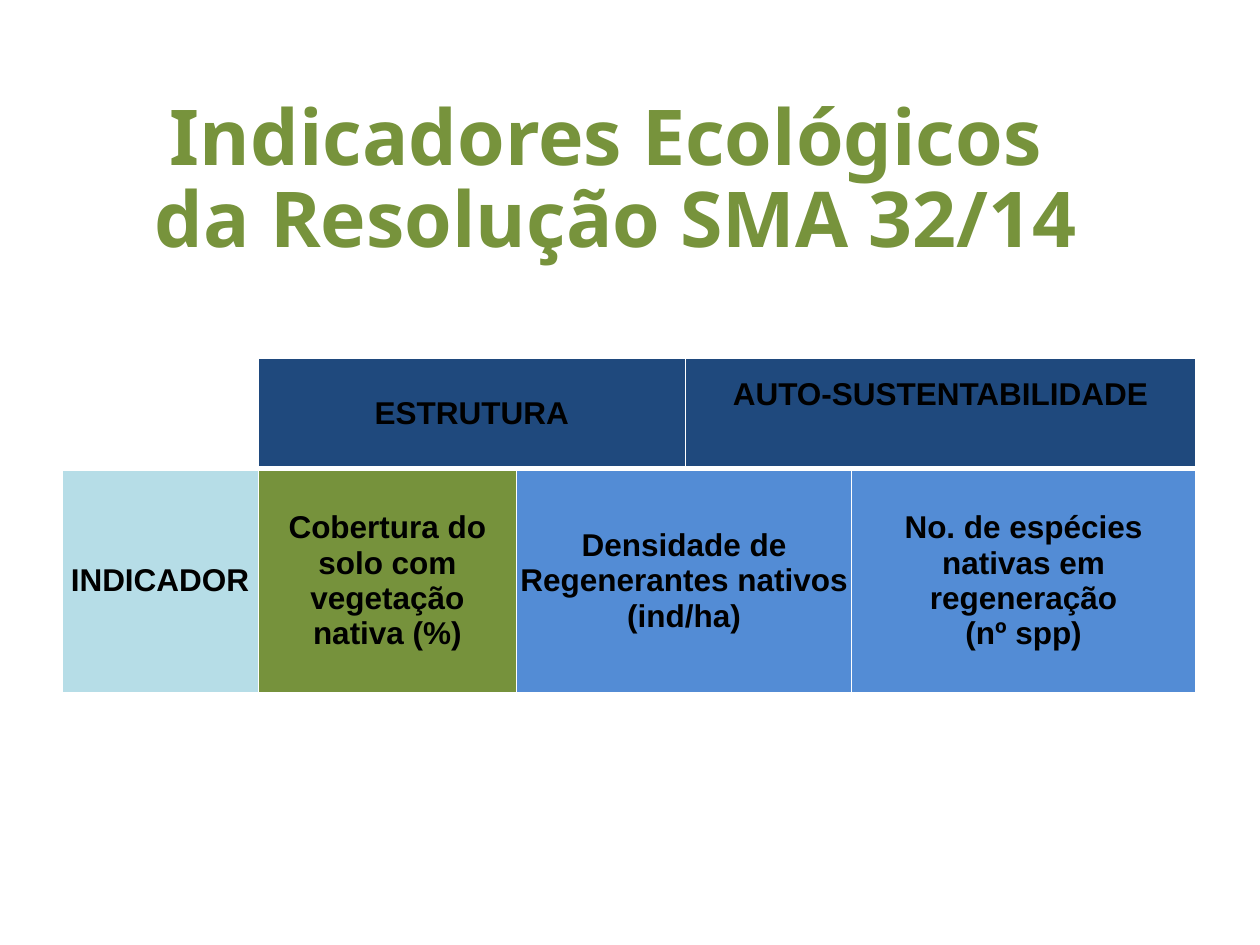
from lxml import etree
from pptx import Presentation
from pptx.dml.color import RGBColor
from pptx.enum.text import MSO_ANCHOR, PP_ALIGN
from pptx.oxml.ns import qn
from pptx.util import Inches, Pt

CENTER, MIDDLE = PP_ALIGN.CENTER, MSO_ANCHOR.MIDDLE

# Content
COLORS = {"title": "77933C", "text": "000000", "white": "FFFFFF", "group": "1F497D",
          "label": "B6DDE7", "cover": "76923C", "regeneration": "538CD5"}
TITLE = "Indicadores Ecológicos \vda Resolução SMA 32/14"
# Each cell: text, columns spanned, fill, bottom margin in inches
ROWS = [
    [("", 1, "white", 0),
     ("ESTRUTURA", 2, "group", 0),
     ("AUTO-SUSTENTABILIDADE", 2, "group", 0.29)],
    [("INDICADOR", 1, "label", 0),
     ("Cobertura do solo com vegetação nativa (%)", 1, "cover", 0),
     ("Densidade de Regenerantes nativos (ind/ha)", 2, "regeneration", 0),
     ("No. de espécies nativas em regeneração\n(nº spp)", 1, "regeneration", 0)],
]
COLUMN_WIDTHS = [1.56, 2.05, 1.34, 1.32, 2.73]
ROW_HEIGHTS = [0.88, 1.78]
THIN, THICK = 1, 3


def write(frame, text, size, font, color, spacing=1.0):
    """Fill a text frame with bold centred paragraphs, one per line of text."""
    frame.word_wrap = True
    frame.text = text
    for paragraph in frame.paragraphs:
        paragraph.alignment = CENTER
        paragraph.line_spacing = spacing
        for target in (paragraph, *paragraph.runs):
            target.font.size = Pt(size)
            target.font.name = font
            target.font.bold = True
            target.font.color.rgb = RGBColor.from_string(COLORS[color])


def set_borders(cell, top, bottom):
    properties = cell._tc.get_or_add_tcPr()
    sides = {"a:lnL": THIN, "a:lnR": THIN, "a:lnT": top, "a:lnB": bottom}
    for position, (tag, width) in enumerate(sides.items()):
        line = etree.Element(qn(tag), w=str(Pt(width)))
        fill = etree.SubElement(line, qn("a:solidFill"))
        etree.SubElement(fill, qn("a:srgbClr"), val=COLORS["white"])
        properties.insert(position, line)


def add_title(slide):
    box = slide.shapes.add_textbox(Inches(0.39), Inches(0.65), Inches(9), Inches(1.59))
    box.text_frame.vertical_anchor = MIDDLE
    write(box.text_frame, TITLE, size=44, font="Noto Sans", color="title", spacing=0.88)


def add_indicators(slide):
    table = slide.shapes.add_table(
        len(ROW_HEIGHTS), len(COLUMN_WIDTHS), Inches(0.49), Inches(2.84),
        Inches(sum(COLUMN_WIDTHS)), Inches(sum(ROW_HEIGHTS))).table
    for column, width in zip(table.columns, COLUMN_WIDTHS):
        column.width = Inches(width)
    for row, height in zip(table.rows, ROW_HEIGHTS):
        row.height = Inches(height)

    for r, cells in enumerate(ROWS):
        c = 0
        for text, span, fill, bottom_margin in cells:
            cell = table.cell(r, c)
            if span > 1:
                cell.merge(table.cell(r, c + span - 1))
            cell.vertical_anchor = MIDDLE
            cell.margin_left = cell.margin_right = Inches(0.03)
            cell.margin_top, cell.margin_bottom = 0, Inches(bottom_margin)
            write(cell.text_frame, text, size=18, font="Arial", color="text")
            # A thick rule separates the header from the indicators
            for offset in range(span):
                part = table.cell(r, c + offset)
                part.fill.solid()
                part.fill.fore_color.rgb = RGBColor.from_string(COLORS[fill])
                set_borders(part, *((THIN, THICK) if r == 0 else (THICK, THIN)))
            c += span


def main():
    deck = Presentation()
    deck.slide_width, deck.slide_height = Inches(10), Inches(7.5)
    slide = deck.slides.add_slide(deck.slide_layouts[6])
    add_title(slide)
    add_indicators(slide)
    deck.save("out.pptx")


if __name__ == "__main__":
    main()
